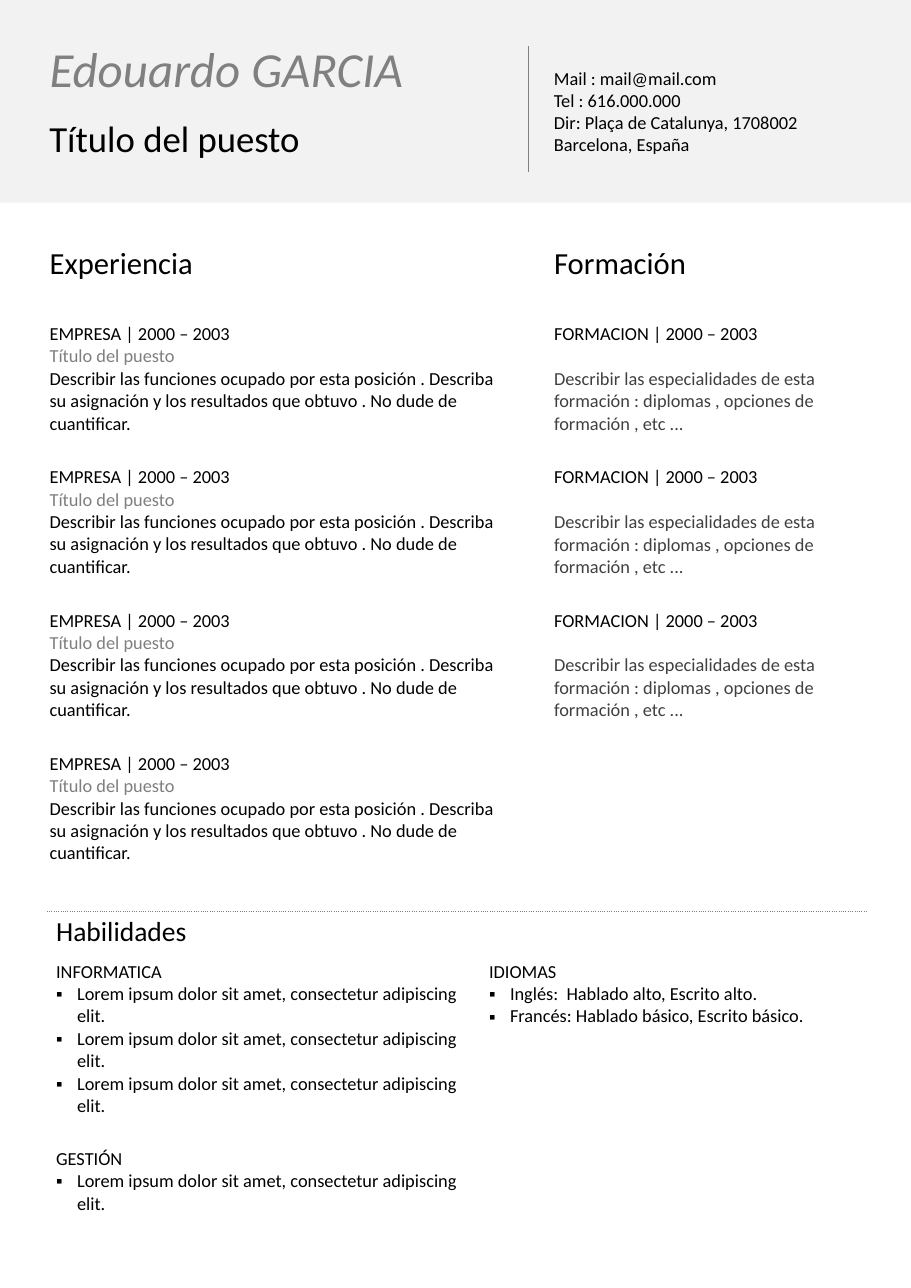
from lxml import etree
from pptx import Presentation
from pptx.dml.color import RGBColor
from pptx.enum.shapes import MSO_CONNECTOR, MSO_SHAPE
from pptx.enum.text import MSO_ANCHOR, MSO_AUTO_SIZE, PP_ALIGN
from pptx.oxml.ns import qn
from pptx.util import Inches, Pt

RECTANGLE = MSO_SHAPE.RECTANGLE
STRAIGHT = MSO_CONNECTOR.STRAIGHT
TOP = MSO_ANCHOR.TOP
LEFT = PP_ALIGN.LEFT
NO_AUTOFIT = MSO_AUTO_SIZE.NONE

FONT = "Calibri"
BLACK, GREY, JOB_GREY, DARK_GREY, PALE = "000000", "808080", "7F7F7F", "404040", "F2F2F2"

NAME = "Edouardo GARCIA"
POSITION = "Título del puesto"
CONTACT = [
    "Mail : mail@mail.com",
    "Tel : 616.000.000",
    "Dir: Plaça de Catalunya, 1708002 Barcelona, España",
]
JOB = [
    ("EMPRESA | 2000 – 2003", BLACK, 0),
    (POSITION, JOB_GREY, 0),
    ("Describir las funciones ocupado por esta posición . Describa su asignación "
     "y los resultados que obtuvo . No dude de cuantificar.", BLACK, 0),
]
COURSE = [
    ("FORMACION | 2000 – 2003", BLACK, 0),
    ("Describir las especialidades de esta formación : diplomas , opciones de "
     "formación , etc ...", DARK_GREY, 14.65),
]
HISTORIES = [
    ("Experiencia", [JOB] * 4, 0.35, 4.37, 1.1),
    ("Formación", [COURSE] * 3 + [[]], 4.93, 3.01, 0.3),
]
LOREM = "Lorem ipsum dolor sit amet, consectetur adipiscing elit."
SKILLS = [
    (1, 0, "INFORMATICA", [LOREM] * 3),
    (1, 1, "IDIOMAS", ["Inglés:  Hablado alto, Escrito alto.",
                       "Francés: Hablado básico, Escrito básico."]),
    (2, 0, "GESTIÓN", [LOREM]),
]


def rgb(value):
    return RGBColor.from_string(value)


def style(paragraph, size, color=BLACK, italic=False):
    paragraph.alignment = LEFT
    for run in paragraph.runs:
        run.font.name = FONT
        run.font.size = Pt(size)
        run.font.bold = False
        run.font.italic = italic
        run.font.color.rgb = rgb(color)


def write(frame, lines, size, color=BLACK, italic=False, wrap=True):
    frame.word_wrap = wrap
    frame.auto_size = NO_AUTOFIT
    frame.vertical_anchor = TOP
    frame.text = "\n".join(lines)
    for paragraph in frame.paragraphs:
        style(paragraph, size, color, italic)


def place(shape, left, top, width, height):
    shape.left, shape.top = Inches(left), Inches(top)
    shape.width, shape.height = Inches(width), Inches(height)


def add_grid(left, top, widths, heights):
    frame = slide.shapes.add_table(
        len(heights), len(widths), Inches(left), Inches(top),
        Inches(sum(widths)), Inches(sum(heights)))
    grid = frame.table
    grid.first_row = grid.horz_banding = False
    for column, width in zip(grid.columns, widths):
        column.width = Inches(width)
    for row, height in zip(grid.rows, heights):
        row.height = Inches(height)
    for cell in grid.iter_cells():
        cell.fill.background()
        cell.margin_left = cell.margin_right = Inches(0.1)
        cell.margin_top = cell.margin_bottom = Inches(0.04)
        end = etree.SubElement(cell.text_frame.paragraphs[0]._p, qn("a:endParaRPr"))
        end.set("sz", "1200")
    return grid


def fill_cell(cell, lines, size):
    cell.text_frame.text = "\n".join(text for text, _, _ in lines)
    for paragraph, (_, color, space) in zip(cell.text_frame.paragraphs, lines):
        if space:
            paragraph.space_before = Pt(space)
        style(paragraph, size, color)


def add_bullet(paragraph):
    props = paragraph._p.get_or_add_pPr()
    props.set("marL", str(Inches(0.19)))
    props.set("indent", str(-Inches(0.19)))
    etree.SubElement(props, qn("a:buFont")).set("typeface", "Arial")
    etree.SubElement(props, qn("a:buChar")).set("char", "▪")


def dot_top(cell):
    line = etree.Element(qn("a:lnT"), w=str(Pt(1)))
    fill = etree.SubElement(line, qn("a:solidFill"))
    etree.SubElement(fill, qn("a:srgbClr")).set("val", GREY)
    etree.SubElement(line, qn("a:prstDash")).set("val", "sysDot")
    cell._tc.get_or_add_tcPr().insert(0, line)


prs = Presentation()
prs.slide_width, prs.slide_height = Inches(8.27), Inches(11.69)
slide = prs.slides.add_slide(prs.slide_layouts[5])

title = slide.shapes.title
place(title, 0.35, 0.3, 3.45, 0.64)
write(title.text_frame, [NAME], 32, GREY, True, False)

band = slide.shapes.add_shape(RECTANGLE, 0, 0, prs.slide_width, Inches(1.84))
band.shadow.inherit = False
band.fill.solid()
band.fill.fore_color.rgb = rgb(PALE)
band.line.fill.background()
title.element.addprevious(band.element)

for lines, size, box, wrap in [
    (CONTACT, 12, (4.93, 0.56, 3.12, 0.91), True),
    ([POSITION], 24, (0.35, 1, 2.5, 0.5), False),
]:
    text_box = slide.shapes.add_textbox(*map(Inches, box))
    write(text_box.text_frame, lines, size, wrap=wrap)

divider = slide.shapes.add_connector(
    STRAIGHT, Inches(4.8), Inches(0.42), Inches(4.8), Inches(1.56))
divider.line.color.rgb = rgb(GREY)
divider.line.width = Pt(0.75)
etree.SubElement(divider.element.spPr, qn("a:effectLst"))

for heading, entries, left, width, last_height in HISTORIES:
    history = add_grid(left, 2.19, [width], [0.42, 0.28] + [1.3] * 3 + [last_height])
    fill_cell(history.cell(0, 0), [(heading, BLACK, 0)], 20)
    for row, entry in enumerate(entries, 2):
        if entry:
            fill_cell(history.cell(row, 0), entry, 12)

skills = add_grid(0.41, 8.27, [3.93, 3.52], [0.41, 1.7, 0.69])
for column in range(2):
    dot_top(skills.cell(0, column))
skills.cell(0, 0).merge(skills.cell(0, 1))
skills.cell(1, 1).merge(skills.cell(2, 1))
fill_cell(skills.cell(0, 0), [("Habilidades", BLACK, 0)], 18)
for row, column, heading, items in SKILLS:
    cell = skills.cell(row, column)
    fill_cell(cell, [(text, BLACK, 0) for text in [heading] + items], 12)
    for paragraph in cell.text_frame.paragraphs[1:]:
        add_bullet(paragraph)

prs.save("out.pptx")
